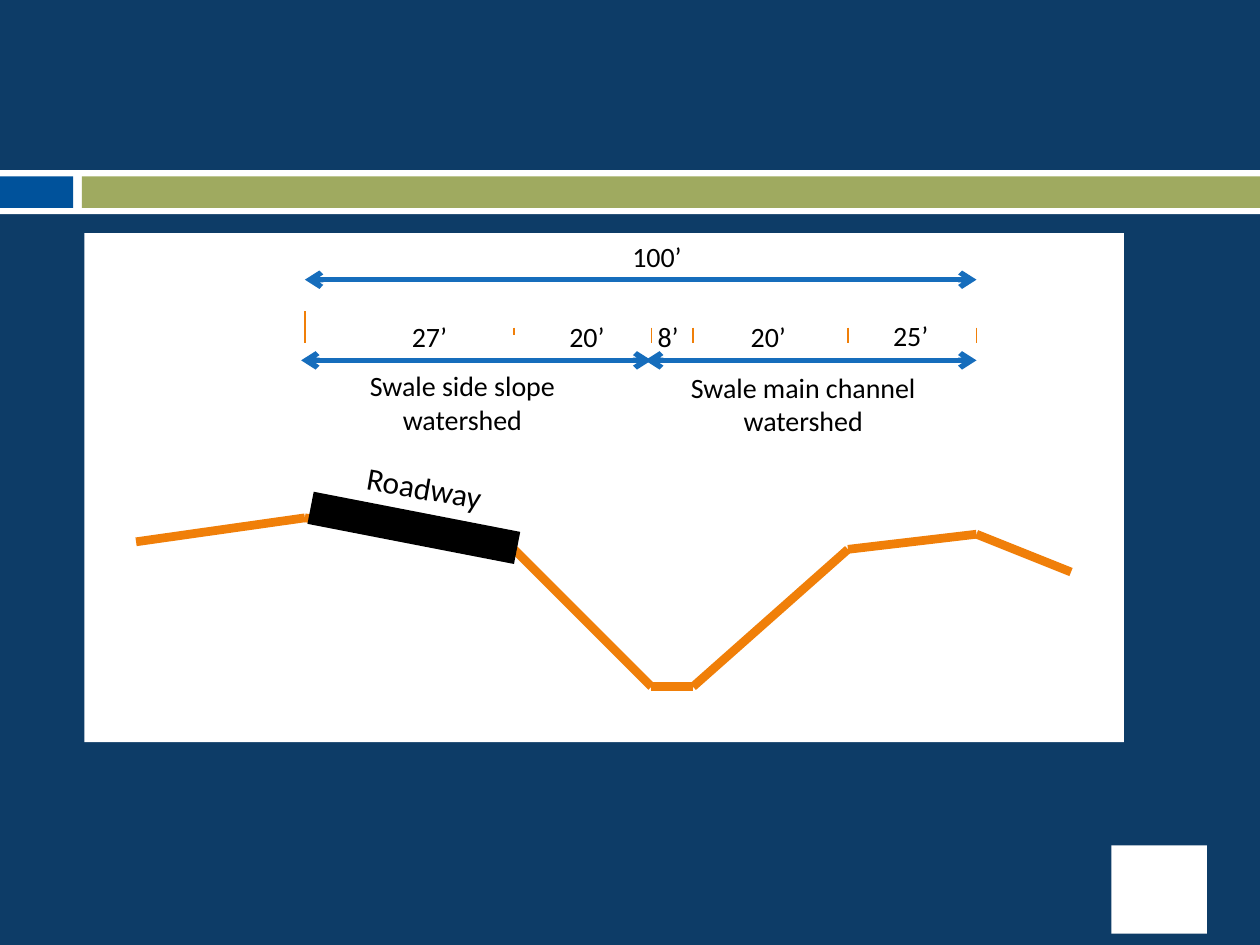
from typing import NamedTuple

from lxml.etree import SubElement
from pptx import Presentation
from pptx.dml.color import RGBColor
from pptx.enum.shapes import MSO_CONNECTOR as Link, MSO_SHAPE as Kind
from pptx.enum.text import MSO_AUTO_SIZE as Fit, PP_ALIGN as Align
from pptx.oxml.ns import qn
from pptx.util import Pt

PX = 9144  # 100 px to the inch
WHITE, BLACK, ORANGE, BLUE = "FFFFFF", "000000", "F07F09", "166DBC"


class Box(NamedTuple):
    x: int
    y: int
    w: int
    h: int
    fill: str
    turn: float = 0
    alpha: int = 100


class Label(NamedTuple):
    text: str
    x: int
    y: int
    w: int
    h: int = 37
    size: int = 16
    turn: float = 0


class Line(NamedTuple):
    x1: int
    y1: int
    x2: int
    y2: int
    color: str = ORANGE
    width: float = 5
    arrows: bool = False


def rgb(color: str) -> RGBColor:
    return RGBColor.from_string(color)


def draw_box(shapes, box: Box) -> None:
    shape = shapes.add_shape(Kind.RECTANGLE, *(n * PX for n in box[:4]))
    shape.shadow.inherit = False
    shape.fill.solid()
    shape.fill.fore_color.rgb = rgb(box.fill)
    shape.line.fill.background()
    shape.rotation = box.turn
    if box.alpha < 100:
        tint = shape._element.spPr.find(qn("a:solidFill"))[0]
        SubElement(tint, qn("a:alpha"), val=str(box.alpha * 1000))


def draw_line(shapes, line: Line) -> None:
    link = shapes.add_connector(Link.STRAIGHT, *(n * PX for n in line[:4]))
    link.line.color.rgb = rgb(line.color)
    link.line.width = Pt(line.width)
    if line.arrows:
        for end in ("a:headEnd", "a:tailEnd"):
            SubElement(link.line._get_or_add_ln(), qn(end), type="arrow")
    SubElement(link._element.spPr, qn("a:effectLst"))


def draw_label(shapes, label: Label) -> None:
    box = shapes.add_textbox(*(n * PX for n in label[1:5]))
    box.rotation = label.turn
    frame = box.text_frame
    frame.word_wrap = False
    frame.auto_size = Fit.SHAPE_TO_FIT_TEXT
    frame.text = label.text
    for para in frame.paragraphs:
        if len(frame.paragraphs) > 1:
            para.alignment = Align.CENTER
        para.font.name = "Calibri"
        para.font.size = Pt(label.size)
        para.font.color.rgb = rgb(BLACK)


# Slide frame and white panel
FRAME = [
    Box(0, 135, 1000, 35, WHITE),
    Box(0, 140, 58, 25, "00529B"),
    Box(65, 140, 935, 25, "7F8E2B", alpha=75),
    Box(882, 671, 76, 70, WHITE),
    Box(67, 185, 825, 404, WHITE),
]

# Ground profile, from left to right
GROUND = [(108, 430), (242, 411), (408, 436), (517, 545),
          (550, 545), (673, 436), (775, 424), (850, 454)]
ROAD = Box(245, 406, 167, 26, BLACK, turn=11)

# Tick marks: x, top, bottom
TICKS = [(242, 247, 272), (408, 260, 266)]
TICKS += [(x, 260, 272) for x in (517, 550, 673, 775)]

# Dimension arrows: left, right, y
SPANS = [(242, 775, 222), (239, 517, 286), (512, 775, 286)]

LABELS = [
    Label("100’", 492, 185, 62),
    Label("27’", 317, 249, 50),
    Label("20’", 442, 249, 50),
    Label("8’", 512, 249, 38),
    Label("20’", 586, 249, 50),
    Label("25’", 699, 248, 50),
    Label("Swale side slope\nwatershed", 273, 288, 188, 64),
    Label("Swale main channel\nwatershed", 524, 289, 227, 64),
    Label("Roadway", 281, 368, 125, 40, size=18, turn=9.9),
]


def main() -> None:
    deck = Presentation()
    deck.slide_width, deck.slide_height = 1000 * PX, 750 * PX
    slide = deck.slides.add_slide(deck.slide_layouts[6])
    slide.background.fill.solid()
    slide.background.fill.fore_color.rgb = rgb("0D3C67")
    shapes = slide.shapes

    for box in FRAME:
        draw_box(shapes, box)
    for start, end in zip(GROUND, GROUND[1:]):
        draw_line(shapes, Line(*start, *end))
    for x, top, low in TICKS:
        draw_line(shapes, Line(x, top, x, low, width=0.79))
    draw_box(shapes, ROAD)
    for left, right, y in SPANS:
        draw_line(shapes, Line(left, y, right, y, BLUE, 3, True))
    for label in LABELS:
        draw_label(shapes, label)

    deck.save("out.pptx")


if __name__ == "__main__":
    main()
